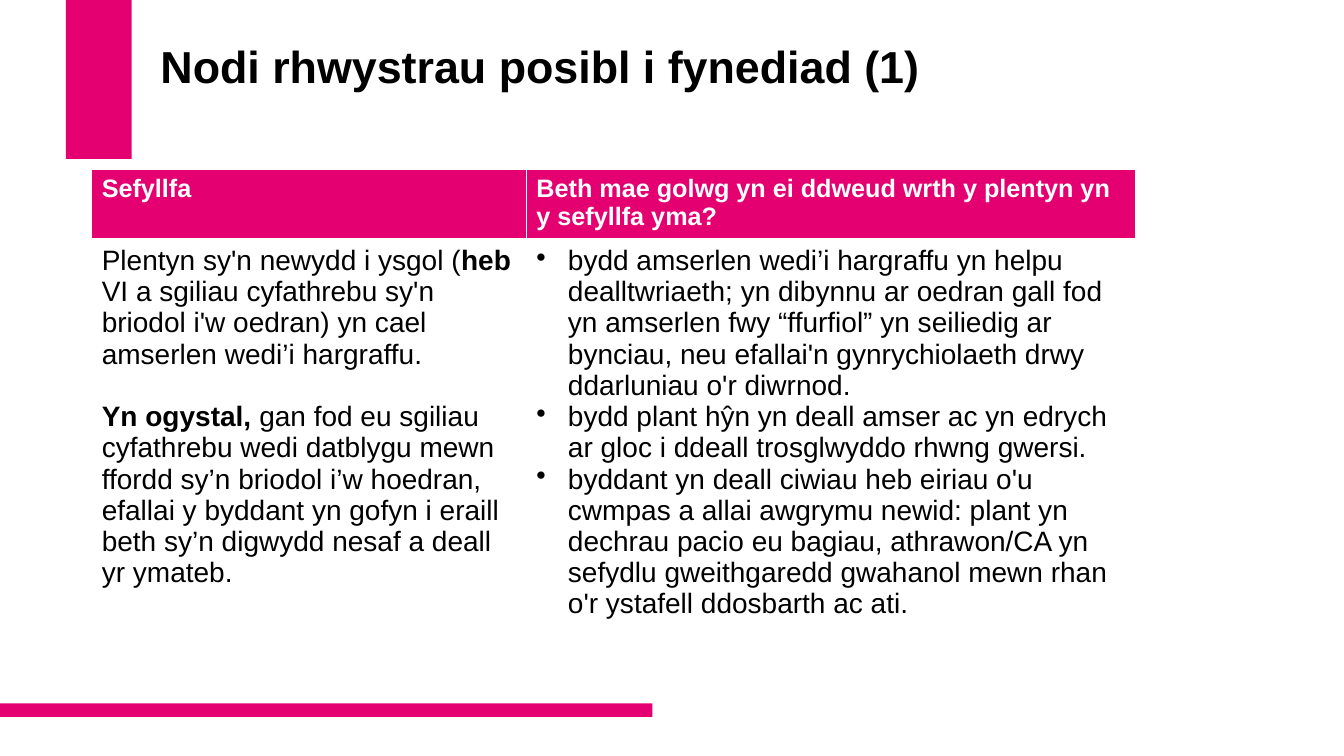
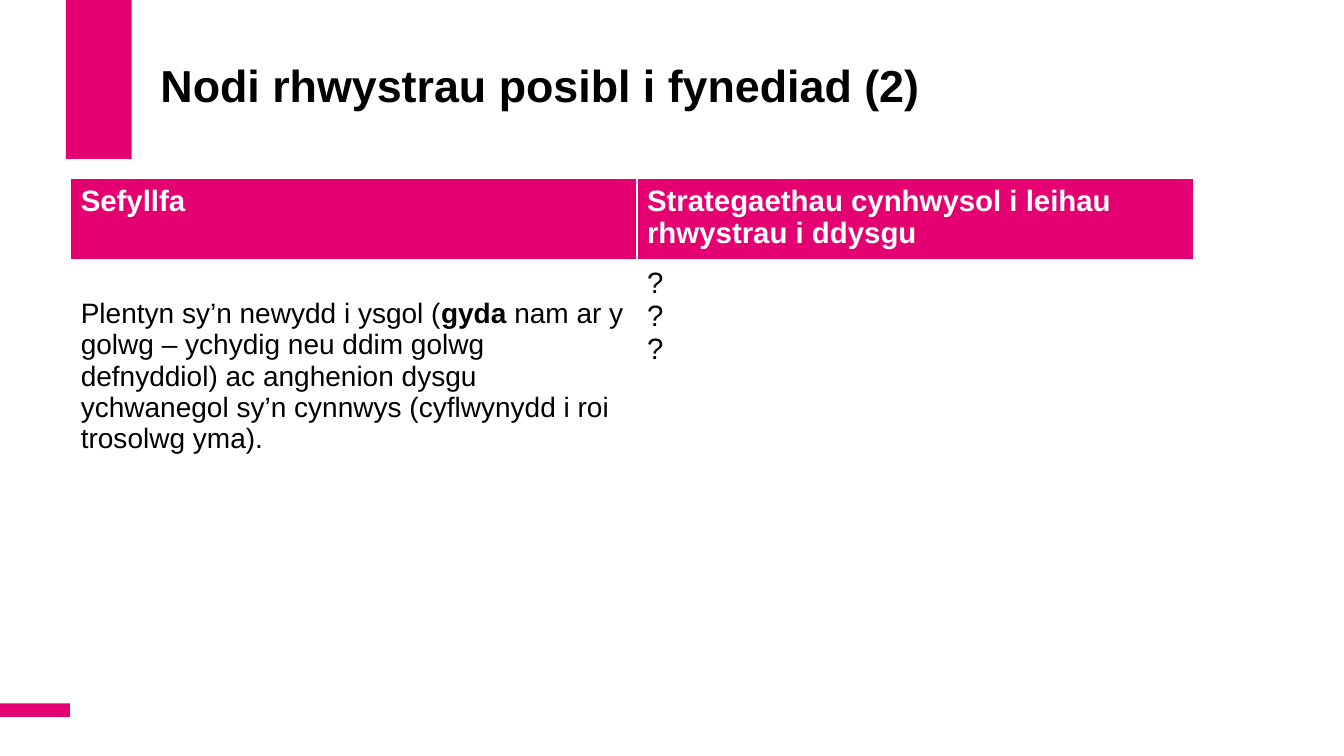
import dataclasses
from typing import Optional

import lxml.etree
import pptx
import pptx.dml.color
import pptx.enum.shapes
import pptx.enum.text
import pptx.oxml.ns
import pptx.util

Pt = pptx.util.Pt
RGBColor = pptx.dml.color.RGBColor


@dataclasses.dataclass(frozen=True)
class Theme:
    accent: RGBColor = RGBColor(0xE5, 0x00, 0x71)
    white: RGBColor = RGBColor(0xFF, 0xFF, 0xFF)
    black: RGBColor = RGBColor(0x00, 0x00, 0x00)
    font: str = "Arial"
    title_size: float = 32
    body_size: float = 20
    thin_border: float = 1
    header_border: float = 3


THEME = Theme()
SLIDE_WIDTH, SLIDE_HEIGHT = 960, 540
BULLET_INDENT = 22.5


@dataclasses.dataclass(frozen=True)
class Box:
    left: float
    top: float
    width: float
    height: float

    def lengths(self) -> tuple[int, int, int, int]:
        return Pt(self.left), Pt(self.top), Pt(self.width), Pt(self.height)


BANDS = (Box(47, 0, 47, 113.5), Box(0, 502.5, 466, 9.5))


@dataclasses.dataclass(frozen=True)
class Run:
    text: str
    bold: bool = False


@dataclasses.dataclass(frozen=True)
class Line:
    runs: tuple[Run, ...]
    bullet: bool = False
    space_before: float = 0


@dataclasses.dataclass(frozen=True)
class Cell:
    lines: tuple[Line, ...]
    size: float = THEME.body_size
    margin_top: Optional[float] = None


@dataclasses.dataclass(frozen=True)
class TableSlide:
    title: str
    title_height: float
    left: float
    top: float
    columns: tuple[float, ...]
    rows: tuple[float, ...]
    vertical_margin: float
    header_size: float
    headers: tuple[str, ...]
    body: tuple[Cell, ...]


def plain(*texts: str, bullet: bool = False) -> tuple[Line, ...]:
    """Make one single-run line from each text."""
    return tuple(Line((Run(text),), bullet) for text in texts)


TABLE_SLIDES = (
    TableSlide(
        title="Nodi rhwystrau posibl i fynediad (1)",
        title_height=77,
        left=65.5,
        top=121,
        columns=(310.5, 435.5),
        rows=(47.5, 327),
        vertical_margin=3.6,
        header_size=18,
        headers=("Sefyllfa", "Beth mae golwg yn ei ddweud wrth y plentyn yn y sefyllfa yma?"),
        body=(
            Cell((
                Line((
                    Run("Plentyn sy'n newydd i ysgol ("),
                    Run("heb", bold=True),
                    Run(" VI a sgiliau cyfathrebu sy'n briodol i'w oedran) yn cael "
                        "amserlen wedi’i hargraffu."),
                )),
                Line((
                    Run("Yn ogystal, ", bold=True),
                    Run("gan fod eu sgiliau cyfathrebu wedi datblygu mewn ffordd sy’n briodol "
                        "i’w hoedran, efallai y byddant yn gofyn i eraill beth sy’n digwydd "
                        "nesaf a deall yr ymateb."),
                ), space_before=22.3),
            )),
            Cell(plain(
                "bydd amserlen wedi’i hargraffu yn helpu dealltwriaeth; yn dibynnu ar oedran "
                "gall fod yn amserlen fwy “ffurfiol” yn seiliedig ar bynciau, neu efallai'n "
                "gynrychiolaeth drwy ddarluniau o'r diwrnod.",
                "bydd plant hŷn yn deall amser ac yn edrych ar gloc i ddeall trosglwyddo "
                "rhwng gwersi.",
                "byddant yn deall ciwiau heb eiriau o'u cwmpas a allai awgrymu newid: plant yn "
                "dechrau pacio eu bagiau, athrawon/CA yn sefydlu gweithgaredd gwahanol mewn "
                "rhan o'r ystafell ddosbarth ac ati.",
                bullet=True,
            )),
        ),
    ),
    TableSlide(
        title="Nodi rhwystrau posibl i fynediad (2)",
        title_height=104.5,
        left=50.5,
        top=127.5,
        columns=(404.5, 397.5),
        rows=(55.5, 165.5) + (31.5,) * 6,
        vertical_margin=4.3,
        header_size=21,
        headers=("Sefyllfa", "Strategaethau cynhwysol i leihau rhwystrau i ddysgu"),
        body=(
            Cell((
                Line((
                    Run("Plentyn sy’n newydd i ysgol ("),
                    Run("gyda ", bold=True),
                    Run("nam ar y golwg – ychydig neu ddim golwg defnyddiol) ac anghenion dysgu "
                        "ychwanegol sy’n cynnwys (cyflwynydd i roi trosolwg yma)."),
                )),
            ), margin_top=26.6),
            Cell(plain("?", "?", "?"), size=21),
        ),
    ),
)


def style_paragraph(paragraph, size: float, color: RGBColor, bold: Optional[bool] = None) -> None:
    font = paragraph.font
    font.name, font.size, font.bold = THEME.font, Pt(size), bold
    font.color.rgb = color


def add_bullet(paragraph) -> None:
    properties = paragraph._p.get_or_add_pPr()
    properties.set("marL", str(Pt(BULLET_INDENT)))
    properties.set("indent", str(-Pt(BULLET_INDENT)))
    bullet = lxml.etree.SubElement(properties, pptx.oxml.ns.qn("a:buChar"))
    bullet.set("char", "•")


def set_borders(cell, bottom: float) -> None:
    """Draw white cell borders; call before the fill, which must follow them."""
    properties = cell._tc.get_or_add_tcPr()
    thin = THEME.thin_border
    for side, width in (("L", thin), ("R", thin), ("T", thin), ("B", bottom)):
        line = lxml.etree.SubElement(properties, pptx.oxml.ns.qn(f"a:ln{side}"))
        line.set("w", str(Pt(width)))
        fill = lxml.etree.SubElement(line, pptx.oxml.ns.qn("a:solidFill"))
        color = lxml.etree.SubElement(fill, pptx.oxml.ns.qn("a:srgbClr"))
        color.set("val", str(THEME.white))


def write_lines(text_frame, content: Cell) -> None:
    for index, line in enumerate(content.lines):
        paragraph = text_frame.paragraphs[0] if index == 0 else text_frame.add_paragraph()
        if line.space_before:
            paragraph.space_before = Pt(line.space_before)
        if line.bullet:
            add_bullet(paragraph)
        style_paragraph(paragraph, content.size, THEME.black)
        for part in line.runs:
            run = paragraph.add_run()
            run.text = part.text
            run.font.bold = part.bold


def add_bands(slide) -> None:
    for band in BANDS:
        shape = slide.shapes.add_shape(pptx.enum.shapes.MSO_SHAPE.RECTANGLE, *band.lengths())
        shape.shadow.inherit = False
        shape.fill.solid()
        shape.fill.fore_color.rgb = THEME.accent
        shape.line.fill.background()


def add_title(slide, text: str, height: float) -> None:
    box = slide.shapes.add_textbox(*Box(107.5, 29, 691, height).lengths())
    text_frame = box.text_frame
    text_frame.word_wrap = True
    text_frame.vertical_anchor = pptx.enum.text.MSO_ANCHOR.MIDDLE
    text_frame.margin_bottom = Pt(40)
    paragraph = text_frame.paragraphs[0]
    paragraph.text = text
    paragraph.line_spacing = 0.9
    style_paragraph(paragraph, THEME.title_size, THEME.black, bold=True)


def add_content_table(slide, content: TableSlide) -> None:
    frame = Box(content.left, content.top, sum(content.columns), sum(content.rows))
    table = slide.shapes.add_table(
        len(content.rows), len(content.columns), *frame.lengths()).table
    table.horz_banding = False
    for column, width in zip(table.columns, content.columns):
        column.width = Pt(width)
    for row_index, (row, height) in enumerate(zip(table.rows, content.rows)):
        row.height = Pt(height)
        is_header = row_index == 0
        for cell in row.cells:
            cell.margin_top = cell.margin_bottom = Pt(content.vertical_margin)
            set_borders(cell, THEME.header_border if is_header else THEME.thin_border)
            cell.fill.solid()
            cell.fill.fore_color.rgb = THEME.accent if is_header else THEME.white
    for column_index, (header, body) in enumerate(zip(content.headers, content.body)):
        paragraph = table.cell(0, column_index).text_frame.paragraphs[0]
        paragraph.text = header
        style_paragraph(paragraph, content.header_size, THEME.white, bold=True)
        body_cell = table.cell(1, column_index)
        if body.margin_top is not None:
            body_cell.margin_top = Pt(body.margin_top)
        write_lines(body_cell.text_frame, body)


def main() -> None:
    presentation = pptx.Presentation()
    presentation.slide_width, presentation.slide_height = Pt(SLIDE_WIDTH), Pt(SLIDE_HEIGHT)
    blank_layout = presentation.slide_layouts[6]
    for content in TABLE_SLIDES:
        slide = presentation.slides.add_slide(blank_layout)
        add_bands(slide)
        add_title(slide, content.title, content.title_height)
        add_content_table(slide, content)
    presentation.save("out.pptx")


if __name__ == "__main__":
    main()
